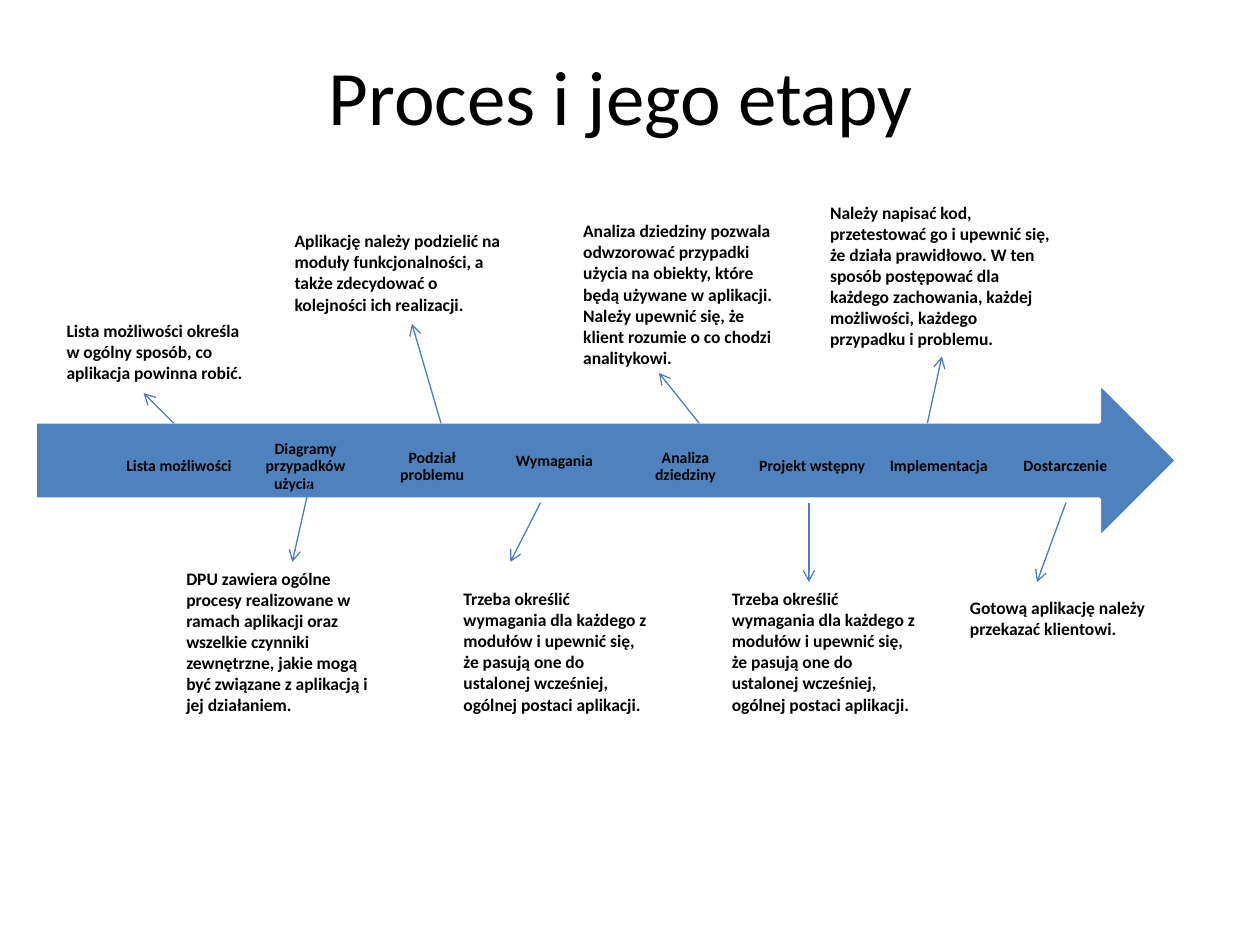
from dataclasses import dataclass
from typing import NamedTuple

from lxml.etree import SubElement
from pptx import Presentation
from pptx.dml.color import RGBColor as RGB
from pptx.enum.shapes import MSO_CONNECTOR as Wire, MSO_SHAPE as Form
from pptx.enum.text import MSO_ANCHOR as Anchor, PP_ALIGN as Align
from pptx.oxml.ns import qn
from pptx.util import Inches, Pt


@dataclass(frozen=True)
class Theme:
    font: str = "Calibri"
    ink: RGB = RGB(0, 0, 0)
    band: RGB = RGB(0x4F, 0x81, 0xBD)
    edge: RGB = RGB(255, 255, 255)
    wire: RGB = RGB(0x4B, 0x7E, 0xBC)
    title: float = 44
    note: float = 10
    label: float = 9


class Box(NamedTuple):
    """Left, top, width and height in grid cells."""
    x: float
    y: float
    w: float
    h: float


class Stage(NamedTuple):
    """A step on the band, its note, and the arrow between them."""
    name: str
    note: str
    box: Box
    start: tuple[float, float]
    end: tuple[float, float]
    shift: tuple[float, float] = (0, 0)
    join: bool = False


THEME = Theme()
COLS, ROWS = 100, 75
WIDTH, HEIGHT = Inches(10), Inches(7.5)
TOP, BASE = 33.6, 39.9  # rows where arrows leave the band
FIRST, STEP = 10, 10.05  # columns of the step labels
NEEDS = ("Trzeba określić wymagania dla każdego z modułów i upewnić się, "
         "że pasują one do ustalonej wcześniej, ogólnej postaci aplikacji.")

STAGES = [
    Stage("Lista możliwości",
          "Lista możliwości określa w ogólny sposób, co aplikacja powinna robić.",
          Box(4.3, 24.9, 16.6, 6.1), (13.8, TOP), (11.4, 31.2)),
    Stage("Diagramy przypadków użycia\t",
          "DPU zawiera ogólne procesy realizowane w ramach aplikacji oraz "
          "wszelkie czynniki zewnętrzne, jakie mogą być związane z aplikacją "
          "i jej działaniem.",
          Box(13.8, 44.6, 16.5, 12.8), (24.8, 37.5), (23.2, 44.6)),
    Stage("Podział problemu",
          "Aplikację należy podzielić na moduły funkcjonalności, a także "
          "zdecydować o kolejności ich realizacji.",
          Box(22.4, 17.8, 19, 7.7), (35, TOP), (32.7, 25.7)),
    Stage("Wymagania", NEEDS,
          Box(35.8, 46.2, 16.6, 11.1), (42.9, BASE), (40.5, 44.6),
          shift=(-0.35, -0.4)),
    Stage("Analiza dziedziny",
          "Analiza dziedziny pozwala odwzorować przypadki użycia na obiekty, "
          "które będą używane w aplikacji. Należy upewnić się, że klient "
          "rozumie o co chodzi analitykowi.",
          Box(45.3, 17, 18.1, 12.8), (55.5, TOP), (52.3, 29.6)),
    Stage("Projekt wstępny", NEEDS,
          Box(57.1, 46.2, 16.6, 11.1), (64.2, BASE), (64.2, 46.2)),
    Stage("Implementacja",
          "Należy napisać kod, przetestować go i upewnić się, że działa "
          "prawidłowo. W ten sposób postępować dla każdego zachowania, każdej "
          "możliwości, każdego przypadku i problemu.",
          Box(64.9, 15.5, 19.7, 12.8), (73.6, TOP), (74.8, 28.2), join=True),
    Stage("Dostarczenie", "Gotową aplikację należy przekazać klientowi.",
          Box(76, 46.9, 16.6, 4.4), (84.6, BASE), (82.3, 46.2)),
]


def col(n: float) -> int:
    return round(WIDTH * n / COLS)


def row(n: float) -> int:
    return round(HEIGHT * n / ROWS)


def place(box: Box) -> tuple[int, int, int, int]:
    return col(box.x), row(box.y), col(box.w), row(box.h)


def write(shape, text: str, *, size: float, bold=True, align=Align.LEFT,
          anchor=Anchor.TOP, pad: float = 1, lead: float = 1) -> None:
    frame = shape.text_frame
    frame.word_wrap = True
    frame.vertical_anchor = anchor
    frame.margin_left = frame.margin_right = col(pad)
    para = frame.paragraphs[0]
    para.alignment, para.line_spacing = align, lead
    run = para.add_run()
    run.text = text
    font = run.font
    font.name, font.size, font.bold = THEME.font, Pt(size), bold
    font.color.rgb = THEME.ink


def draw_band(shapes, box: Box) -> None:
    band = shapes.add_shape(Form.RIGHT_ARROW, *place(box))
    band.shadow.inherit = False
    band.fill.solid()
    band.fill.fore_color.rgb = THEME.band
    band.line.color.rgb = THEME.edge
    band.line.width = Pt(2)


def draw_label(shapes, stage: Stage, spot: int) -> None:
    dx, dy = stage.shift
    box = Box(FIRST + STEP * spot + dx, 34 + dy, 8.4, 6.1)
    label = shapes.add_textbox(*place(box))
    label.text_frame.margin_top = label.text_frame.margin_bottom = row(1)
    write(label, stage.name, size=THEME.label, align=Align.CENTER,
          anchor=Anchor.MIDDLE, pad=0, lead=0.9)


def draw_note(shapes, stage: Stage) -> None:
    note = shapes.add_textbox(*place(stage.box))
    write(note, stage.note, size=THEME.note)
    (ax, ay), (bx, by) = stage.start, stage.end
    wire = shapes.add_connector(Wire.STRAIGHT, col(ax), row(ay), col(bx), row(by))
    if stage.join:
        wire.end_connect(note, 2)
    wire.line.color.rgb = THEME.wire
    wire.line.width = Pt(0.75)
    # Open arrowhead, no shadow
    SubElement(wire.line._get_or_add_ln(), qn("a:tailEnd"), type="arrow")
    SubElement(wire._element.spPr, qn("a:effectLst"))


def main() -> None:
    deck = Presentation()
    deck.slide_width, deck.slide_height = WIDTH, HEIGHT
    slide = deck.slides.add_slide(deck.slide_layouts[5])

    # Title
    title = slide.shapes.title
    title.left, title.top, title.width, title.height = place(Box(4.3, 1.3, 90, 12.5))
    write(title, "Proces i jego etapy", size=THEME.title, bold=False,
          align=Align.CENTER, anchor=Anchor.MIDDLE)

    # Band with its steps
    group = slide.shapes.add_group_shape().shapes
    draw_band(group, Box(2.8, 30.4, 90.6, 12.3))
    for spot, stage in enumerate(STAGES):
        draw_label(group, stage, spot)

    # Notes above and below
    for stage in STAGES:
        draw_note(slide.shapes, stage)
    deck.save("out.pptx")


if __name__ == "__main__":
    main()
